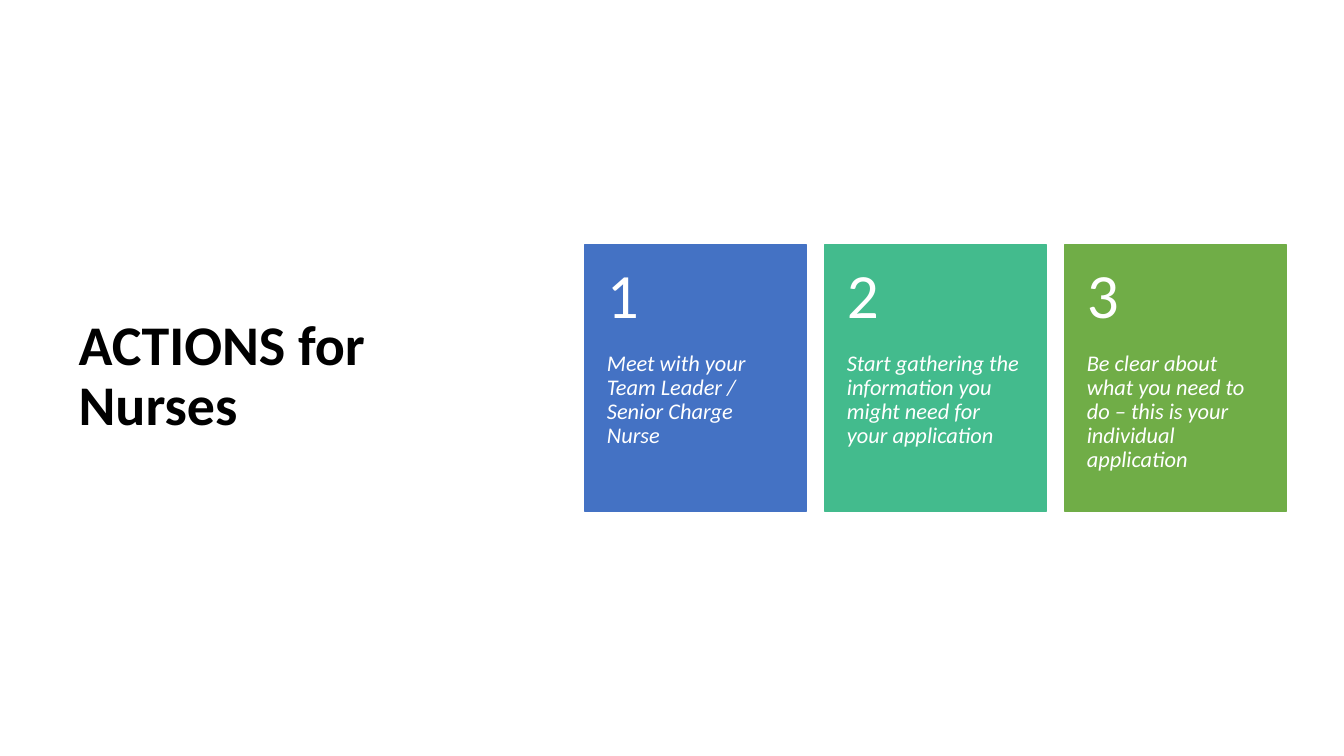
import pptx
import pptx.dml.color
import pptx.enum.shapes
import pptx.enum.text
import pptx.util

Inches = pptx.util.Inches
ANCHOR = pptx.enum.text.MSO_ANCHOR

# Content
TITLE = "ACTIONS for Nurses"
ACTIONS = [
    ("Meet with your Team Leader / Senior Charge Nurse", "4472C4"),
    ("Start gathering the information you might need for your application", "43BB8D"),
    ("Be clear about what you need to do – this is your individual application", "70AD47"),
]

# Theme: colours and type sizes
THEME = {
    "title": {"size": 40, "color": "000000", "bold": True},
    "number": {"size": 45, "color": "FFFFFF"},
    "action": {"size": 16, "color": "FFFFFF", "italic": True},
}
FONT = "Calibri"

# Layout in inches
TITLE_BOX = (0.68, 1.27, 3.94, 4.95)
CARD_LEFT, CARD_TOP, CARD_W, CARD_H = 5.8, 2.43, 2.2, 2.64
CARD_STEP = 2.38
NUMBER_H = 1.06
NUMBER_INSETS = (0.22, 0.18, 0.22, 0.18)
ACTION_INSETS = (0.22, 0, 0.22, 0.36)


def rgb(value):
    return pptx.dml.color.RGBColor.from_string(value)


def write(sp, text, style, anchor, insets=None):
    tf = sp.text_frame
    formats = {"word_wrap": True, "vertical_anchor": anchor,
               "auto_size": pptx.enum.text.MSO_AUTO_SIZE.NONE}
    if insets:
        sides = ("margin_left", "margin_top", "margin_right", "margin_bottom")
        formats.update(zip(sides, map(Inches, insets)))
    for name, value in formats.items():
        setattr(tf, name, value)
    p = tf.paragraphs[0]
    p.line_spacing = 0.9
    r = p.add_run()
    r.text = text
    look = THEME[style]
    font = {"name": FONT, "size": pptx.util.Pt(look["size"]),
            "bold": look.get("bold", False), "italic": look.get("italic", False)}
    for name, value in font.items():
        setattr(r.font, name, value)
    r.font.color.rgb = rgb(look["color"])


def add_card(shapes, number, action, color):
    left = CARD_LEFT + (number - 1) * CARD_STEP
    sp = shapes.add_shape(pptx.enum.shapes.MSO_SHAPE.RECTANGLE,
                          *map(Inches, (left, CARD_TOP, CARD_W, CARD_H)))
    sp.shadow.inherit = False
    sp.fill.solid()
    sp.fill.fore_color.rgb = rgb(color)
    sp.line.color.rgb = rgb(color)
    sp.line.width = pptx.util.Pt(1)

    # Action below, number above
    parts = [
        (action, "action", CARD_TOP + NUMBER_H, CARD_H - NUMBER_H, ANCHOR.TOP, ACTION_INSETS),
        (str(number), "number", CARD_TOP, NUMBER_H, ANCHOR.MIDDLE, NUMBER_INSETS),
    ]
    for text, style, top, height, anchor, insets in parts:
        box = shapes.add_textbox(*map(Inches, (left, top, CARD_W, height)))
        write(box, text, style, anchor, insets)


def main():
    prs = pptx.Presentation()
    prs.slide_width, prs.slide_height = Inches(13.33), Inches(7.5)
    s = prs.slides.add_slide(prs.slide_layouts[5])

    # Title
    title = s.shapes.title
    for name, value in zip(("left", "top", "width", "height"), TITLE_BOX):
        setattr(title, name, Inches(value))
    write(title, TITLE, "title", ANCHOR.MIDDLE)
    title.text_frame.paragraphs[0].alignment = pptx.enum.text.PP_ALIGN.LEFT

    # Numbered action cards
    cards = s.shapes.add_group_shape()
    for number, (action, color) in enumerate(ACTIONS, 1):
        add_card(cards.shapes, number, action, color)

    prs.save("out.pptx")


if __name__ == "__main__":
    main()
